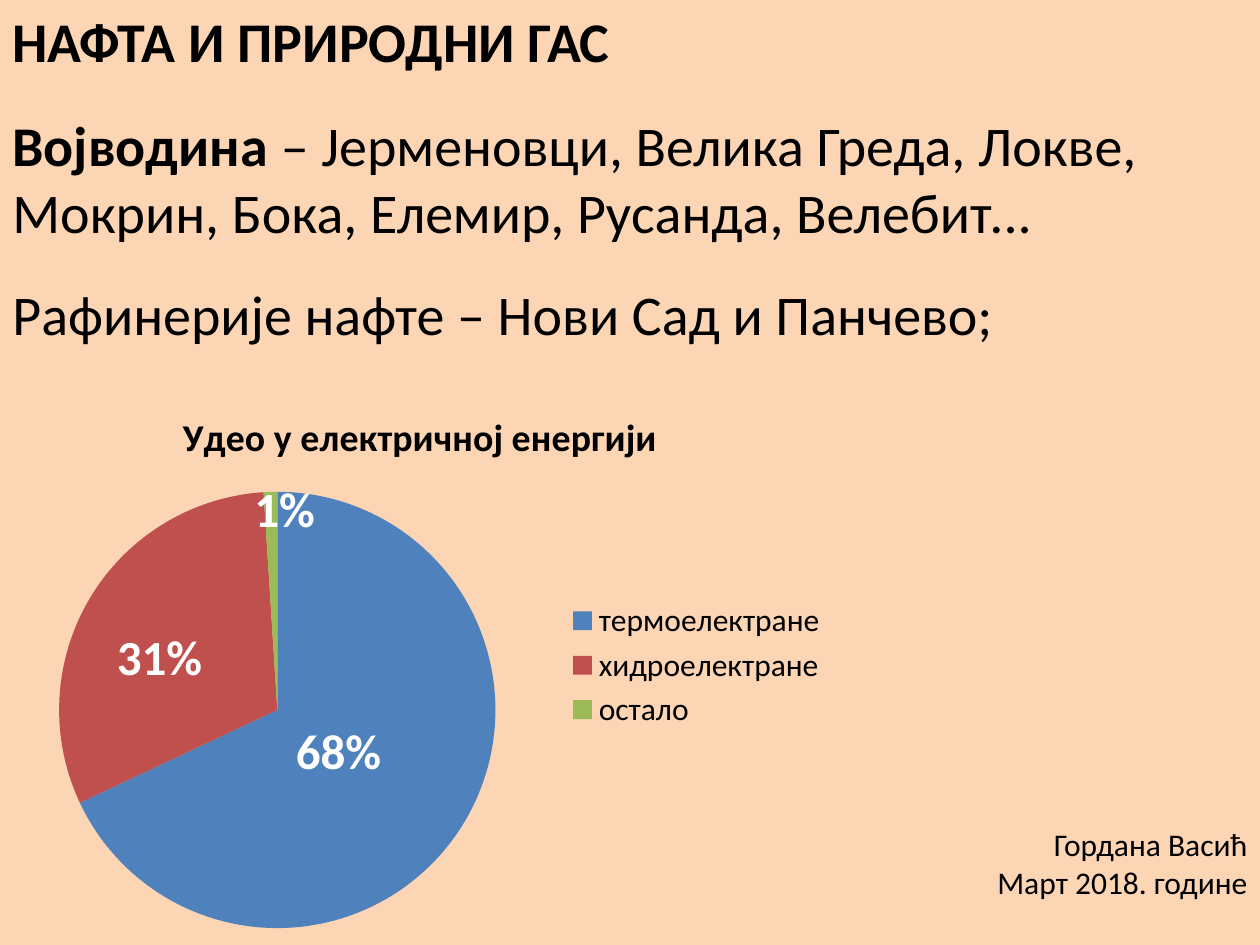
from lxml import etree
from pptx import Presentation
from pptx.chart.data import CategoryChartData
from pptx.dml.color import RGBColor
from pptx.enum.chart import XL_CHART_TYPE, XL_LEGEND_POSITION
from pptx.enum.text import MSO_ANCHOR, MSO_AUTO_SIZE, PP_ALIGN
from pptx.oxml.ns import qn
from pptx.util import Inches, Pt

FONT = "Calibri"
PEACH = RGBColor(0xFC, 0xD5, 0xB5)
BLACK = RGBColor(0x00, 0x00, 0x00)
WHITE = RGBColor(0xFF, 0xFF, 0xFF)
BLUE = RGBColor(0x4F, 0x81, 0xBD)
RED = RGBColor(0xC0, 0x50, 0x4D)
GREEN = RGBColor(0x9B, 0xBB, 0x59)

CHART_TITLE = "Удео у електричној енергији"
SHARES = [("термоелектране", 68, BLUE), ("хидроелектране", 31, RED), ("остало", 1, GREEN)]


def style_font(font, size, color=BLACK, bold=False):
    font.name = FONT
    font.size = Pt(size)
    font.bold = bold
    font.color.rgb = color


def fill_text(shape, lines, size, color=BLACK, bold=False, align=PP_ALIGN.LEFT):
    """Write one paragraph per line and return the paragraphs."""
    frame = shape.text_frame
    frame.word_wrap = True
    frame.auto_size = MSO_AUTO_SIZE.NONE
    frame.vertical_anchor = MSO_ANCHOR.TOP
    frame.text = "\n".join(lines)
    for para in frame.paragraphs:
        para.alignment = align
        style_font(para.font, size, color, bold)
    return frame.paragraphs


def add_text(page, box, lines, size, **style):
    shape = page.shapes.add_textbox(*map(Inches, box))
    return fill_text(shape, lines, size, **style)


def add_heading(page, box):
    title = page.shapes.title
    title.left, title.top, title.width, title.height = map(Inches, box)
    fill_text(title, ["НАФТА И ПРИРОДНИ ГАС"], 32, bold=True)


def add_oil_fields(page, box):
    left, top, width, height = box
    first, second = add_text(
        page, (left, top, width, 1.18),
        ["", "Мокрин, Бока, Елемир, Русанда, Велебит..."], 32)
    region = first.add_run()
    region.text = "Војводина"
    region.font.bold = True
    first.add_run().text = " – Јерменовци, Велика Греда, Локве,"

    # Refineries stand at the bottom of the region
    add_text(page, (left, top + height - 0.64, width, 0.64),
             ["Рафинерије нафте – Нови Сад и Панчево;"], 32)


def place_plot(chart, **fractions):
    """Fix the inner plot area as fractions of the chart."""
    plot_area = chart.plots[0]._element.getparent()
    layout = plot_area.find(qn("c:layout"))
    if layout is None:
        layout = etree.Element(qn("c:layout"))
        plot_area.insert(0, layout)
    manual = etree.SubElement(layout, qn("c:manualLayout"))
    settings = {"layoutTarget": "inner", "xMode": "edge", "yMode": "edge", **fractions}
    for name, value in settings.items():
        etree.SubElement(manual, qn("c:" + name)).set("val", str(value))


def add_share_chart(page, box):
    data = CategoryChartData()
    data.categories = [name for name, value, color in SHARES]
    data.add_series(CHART_TITLE, [value for name, value, color in SHARES])
    chart = page.shapes.add_chart(XL_CHART_TYPE.PIE, *map(Inches, box), data).chart
    style_font(chart.font, 18)

    # Title and legend
    chart.has_title = True
    chart.chart_title.include_in_layout = False
    heading = chart.chart_title.text_frame
    heading.text = CHART_TITLE
    style_font(heading.paragraphs[0].font, 21.6, bold=True)
    chart.has_legend = True
    chart.legend.position = XL_LEGEND_POSITION.RIGHT
    chart.legend.include_in_layout = False

    # Slices
    plot = chart.plots[0]
    plot.vary_by_categories = True
    for index, (name, value, color) in enumerate(SHARES):
        fill = plot.series[0].points[index].format.fill
        fill.solid()
        fill.fore_color.rgb = color
    place_plot(chart, x=0.07, y=0.19, w=0.52, h=0.78)

    # Percentages over the slices
    left, top = box[:2]
    places = [(2.25, 2.61, 1.33), (0.83, 1.86, 1.17), (1.92, 0.69, 0.92)]
    for (name, value, color), (x, y, width) in zip(SHARES, places):
        add_text(page, (left + x, top + y, width, 0.57), [f"{value}%"], 28,
                 color=WHITE, bold=True)


def add_signature(page, box):
    add_text(page, box, ["Гордана Васић", "Март 2018. године"], 18, align=PP_ALIGN.RIGHT)


def main():
    deck = Presentation()
    deck.slide_width, deck.slide_height = Inches(10), Inches(7.5)
    page = deck.slides.add_slide(deck.slide_layouts[5])
    page.background.fill.solid()
    page.background.fill.fore_color.rgb = PEACH

    add_heading(page, (0, 0, 10, 0.64))
    add_oil_fields(page, (0, 0.83, 10, 1.98))
    add_share_chart(page, (0, 3.06, 6.67, 4.44))
    add_signature(page, (6.5, 6.5, 3.5, 0.71))
    deck.save("out.pptx")


if __name__ == "__main__":
    main()
